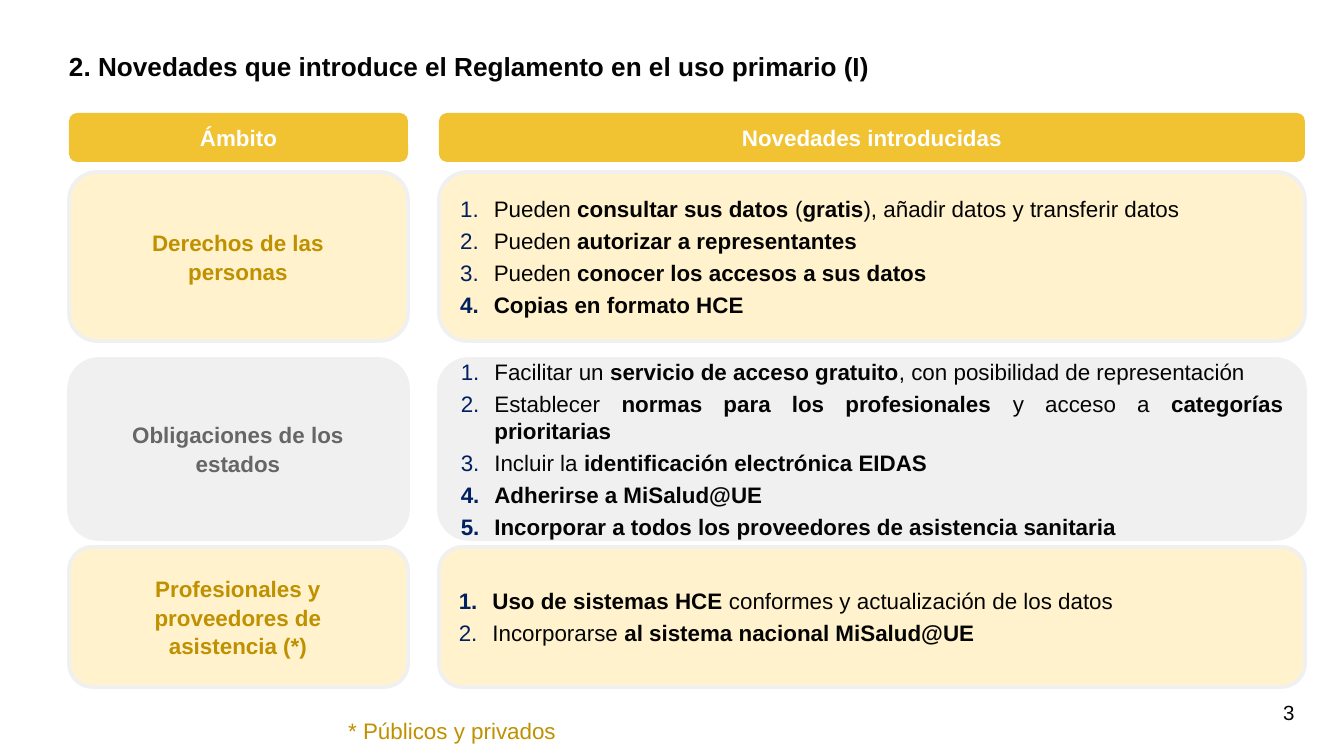
"""Build the slide on what the regulation brings to primary use."""
from dataclasses import dataclass

from lxml import etree
from pptx import Presentation, util as u
from pptx.enum import shapes, text
from pptx.dml.color import RGBColor
from pptx.oxml import ns

PX = 914400 / 134.4
FONT = "Arial"
COLORS = {
    "ink": "040404", "white": "FFFFFF", "gold": "F1C232", "cream": "FFF2CC",
    "grey": "F0F0F0", "ochre": "BF9000", "slate": "666666", "navy": "002060",
}


@dataclass(frozen=True)
class Box:
    x: int
    y: int
    w: int
    h: int

    def emu(self) -> list[int]:
        return [round(v * PX) for v in (self.x, self.y, self.w, self.h)]


@dataclass(frozen=True)
class Column:
    x: int
    w: int
    heading: str


@dataclass(frozen=True)
class Row:
    y: int
    h: int
    label_h: int
    label: str
    fill: str
    color: str
    items: tuple[str, ...]


SCOPE = Column(69, 339, "Ámbito")
NEWS = Column(439, 866, "Novedades introducidas")
ROWS = (
    Row(172, 169, 87, "Derechos de las personas", "cream", "ochre", (
        "Pueden **consultar sus datos **(**gratis**), añadir datos y transferir datos",
        "Pueden **autorizar a representantes**",
        "Pueden **conocer los accesos a sus datos**",
        "**Copias en formato HCE**",
    )),
    Row(359, 180, 93, "Obligaciones de los estados", "grey", "slate", (
        "Facilitar un **servicio de acceso gratuito**, con posibilidad de representación",
        "Establecer **normas para los profesionales **y acceso a **categorías prioritarias**",
        "Incluir la **identificación electrónica EIDAS**",
        "**Adherirse a MiSalud@UE**",
        "**Incorporar a todos los proveedores de asistencia sanitaria**",
    )),
    Row(547, 140, 73, "Profesionales y proveedores de asistencia (*)", "cream", "ochre", (
        "**Uso de sistemas HCE **conformes y actualización de los datos",
        "Incorporarse** al sistema nacional MiSalud@UE**",
    )),
)


def rgb(name: str) -> RGBColor:
    return RGBColor.from_string(COLORS[name])


def style(r, size: int, color: str, bold: bool = False) -> None:
    r.font.name, r.font.size, r.font.bold = FONT, u.Pt(size), bold
    r.font.color.rgb = rgb(color)


def set_insets(tf, x: int, y: int) -> None:
    tf.margin_left = tf.margin_right = round(x * PX)
    tf.margin_top = tf.margin_bottom = round(y * PX)


def write(tf, words: str, size: int, color: str, bold: bool = False,
          align=text.PP_ALIGN.LEFT, anchor=text.MSO_ANCHOR.TOP) -> None:
    tf.text, tf.word_wrap, tf.vertical_anchor = words, True, anchor
    p = tf.paragraphs[0]
    p.alignment = align
    style(p.runs[0], size, color, bold)


def add_text(s, box: Box, words: str, size: int, color: str, **options):
    tf = s.shapes.add_textbox(*box.emu()).text_frame
    write(tf, words, size, color, **options)
    return tf


def add_card(s, box: Box, fill: str, line: str | None = None):
    sp = s.shapes.add_shape(shapes.MSO_SHAPE.ROUNDED_RECTANGLE, *box.emu())
    sp.shadow.inherit = False
    sp.fill.solid()
    sp.fill.fore_color.rgb = rgb(fill)
    if line:
        sp.line.color.rgb = rgb(line)
        sp.line.width = u.Pt(2)
    else:
        sp.line.fill.background()
    set_insets(sp.text_frame, 13, 9)
    return sp


def number(p) -> None:
    pPr = p._p.get_or_add_pPr()
    pPr.set("marL", str(u.Inches(0.25)))
    pPr.set("indent", str(-u.Inches(0.25)))
    color = etree.SubElement(pPr, ns.qn("a:buClr"))
    etree.SubElement(color, ns.qn("a:srgbClr"), val=COLORS["navy"])
    etree.SubElement(pPr, ns.qn("a:buFont"), typeface=FONT)
    etree.SubElement(pPr, ns.qn("a:buAutoNum"), type="arabicPeriod")


def write_list(tf, items: tuple[str, ...]) -> None:
    tf.word_wrap, tf.vertical_anchor = True, text.MSO_ANCHOR.MIDDLE
    for i, item in enumerate(items):
        p = tf.add_paragraph() if i else tf.paragraphs[0]
        number(p)
        p.alignment = text.PP_ALIGN.JUSTIFY
        if i:
            p.space_before = u.Pt(2.8)
        for j, part in enumerate(item.split("**")):
            if part:
                r = p.add_run()
                r.text = part
                style(r, 12, "ink", j % 2 == 1)


def add_heading(s, column: Column) -> None:
    sp = add_card(s, Box(column.x, 113, column.w, 49), "gold")
    write(sp.text_frame, column.heading, 12, "white", True,
          text.PP_ALIGN.CENTER, text.MSO_ANCHOR.MIDDLE)


def add_row(s, row: Row) -> None:
    add_card(s, Box(SCOPE.x, row.y, SCOPE.w, row.h), row.fill, "grey")
    sp = add_card(s, Box(NEWS.x, row.y, NEWS.w, row.h), row.fill, "grey")
    write_list(sp.text_frame, row.items)
    label = Box(105, row.y + (row.h - row.label_h) // 2, 266, row.label_h)
    tf = add_text(s, label, row.label, 12, row.color, bold=True,
                  align=text.PP_ALIGN.CENTER, anchor=text.MSO_ANCHOR.MIDDLE)
    set_insets(tf, 13, 13)
    tf.paragraphs[0].line_spacing = 1.06


def add_title(s, words: str) -> None:
    sp = s.shapes.title
    sp.left, sp.top, sp.width, sp.height = Box(69, 50, 1239, 50).emu()
    tf = sp.text_frame
    write(tf, words, 14, "ink", True)
    tf.auto_size = text.MSO_AUTO_SIZE.NONE
    set_insets(tf, 0, 0)


def main() -> None:
    prs = Presentation()
    prs.slide_width, prs.slide_height = round(1344 * PX), round(756 * PX)
    s = prs.slides.add_slide(prs.slide_layouts[5])
    add_title(s, "2. Novedades que introduce el Reglamento en el uso primario (I)")
    for column in (NEWS, SCOPE):
        add_heading(s, column)
    for row in ROWS:
        add_row(s, row)
    add_text(s, Box(1270, 693, 78, 59), "3", 11, "ink")
    add_text(s, Box(335, 711, 481, 40), "* Públicos y privados", 12, "ochre")
    prs.save("out.pptx")


if __name__ == "__main__":
    main()
